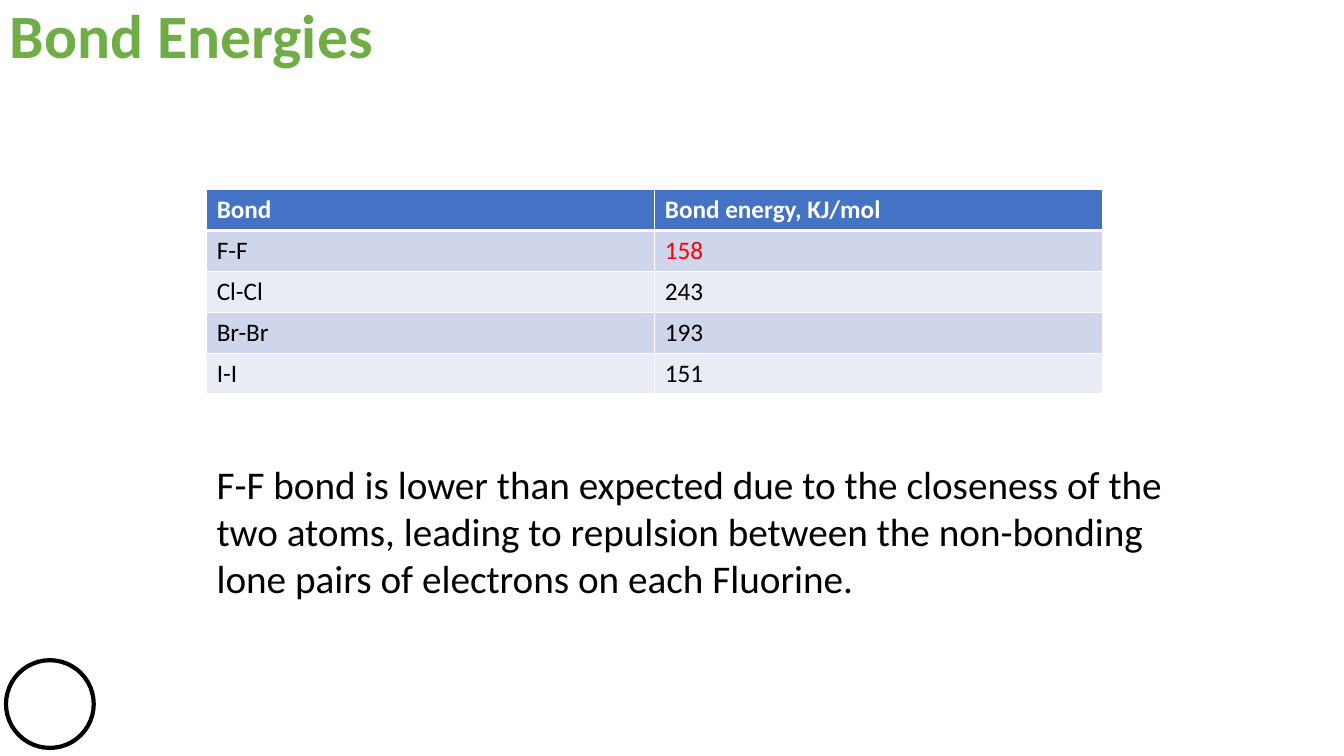
from lxml.etree import SubElement
from pptx import Presentation
from pptx.dml.color import RGBColor
from pptx.enum.shapes import MSO_SHAPE as Preset
from pptx.enum.text import MSO_ANCHOR as Anchor
from pptx.oxml.ns import qn
from pptx.util import Inches, Pt

COLORS = {
    "green": "70AD47", "blue": "4472C4", "band": "CFD5EA", "pale": "E9EBF5",
    "red": "FF0000", "black": "000000", "white": "FFFFFF",
}


def color(name):
    return RGBColor.from_string(COLORS[name])


def write(frame, text, size=18, ink="black", bold=False, spacing=None):
    frame.word_wrap = True
    para = frame.paragraphs[0]
    para.line_spacing = spacing
    span = para.add_run()
    span.text = text
    span.font.name = "Calibri"
    span.font.size = Pt(size)
    span.font.bold = bold
    span.font.color.rgb = color(ink)


deck = Presentation()
deck.slide_width = Inches(13.33)
deck.slide_height = Inches(7.5)
page = deck.slides.add_slide(deck.slide_layouts[6])

# Corner circle
circle = page.shapes.add_shape(
    Preset.OVAL, Inches(0.06), Inches(6.55), Inches(0.87), Inches(0.87))
circle.shadow.inherit = False
circle.fill.solid()
circle.fill.fore_color.rgb = color("white")
circle.line.color.rgb = color("black")
circle.line.width = Pt(3)

# Title
title = page.shapes.add_textbox(0, 0, Inches(12.42), Inches(1.45))
write(title.text_frame, "Bond Energies", size=44, ink="green", bold=True, spacing=0.9)

# Bond energy table
rows = [
    ("Bond", "Bond energy, KJ/mol"),
    ("F-F", "158"),
    ("Cl-Cl", "243"),
    ("Br-Br", "193"),
    ("I-I", "151"),
]
table = page.shapes.add_table(
    len(rows), 2, Inches(2.05), Inches(1.88), Inches(8.89), Inches(2.03)).table

for r, row in enumerate(rows):
    header = r == 0
    fill = "blue" if header else ("pale", "band")[r % 2]
    for c, text in enumerate(row):
        cell = table.cell(r, c)
        cell.vertical_anchor = Anchor.TOP
        ink = "white" if header else "red" if text == "158" else "black"
        write(cell.text_frame, text, ink=ink, bold=header)

        # Borders come before the fill in the cell properties
        props = cell._tc.get_or_add_tcPr()
        for side in ("lnL", "lnR", "lnT", "lnB"):
            thick = (header and side == "lnB") or (r == 1 and side == "lnT")
            edge = SubElement(props, qn("a:" + side), w=str(Pt(3 if thick else 1)))
            paint = SubElement(edge, qn("a:solidFill"))
            SubElement(paint, qn("a:srgbClr"), val=COLORS["white"])
        cell.fill.solid()
        cell.fill.fore_color.rgb = color(fill)

# Explanation
note = page.shapes.add_textbox(Inches(2.05), Inches(4.52), Inches(9.77), Inches(1.51))
write(
    note.text_frame,
    "F-F bond is lower than expected due to the closeness of the two atoms, "
    "leading to repulsion between the non-bonding lone pairs of electrons "
    "on each Fluorine.",
    size=28)

deck.save("out.pptx")
